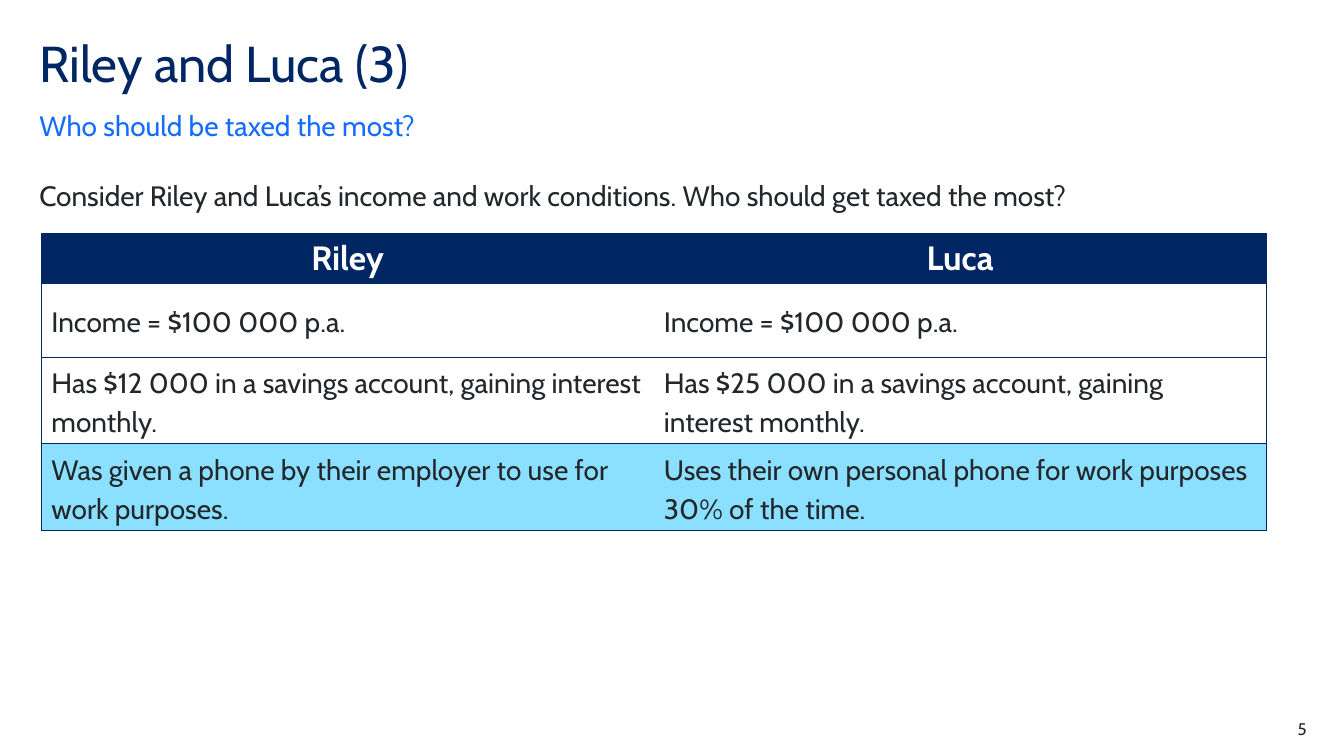
from dataclasses import dataclass

from lxml import etree
from pptx import Presentation
from pptx.dml.color import RGBColor
from pptx.enum.text import MSO_ANCHOR, PP_ALIGN
from pptx.oxml.ns import qn
from pptx.util import Inches, Pt

TOP, MIDDLE, BOTTOM = MSO_ANCHOR.TOP, MSO_ANCHOR.MIDDLE, MSO_ANCHOR.BOTTOM
LEFT, CENTER, RIGHT = PP_ALIGN.LEFT, PP_ALIGN.CENTER, PP_ALIGN.RIGHT

NAVY = RGBColor(0x00, 0x26, 0x64)
BLUE = RGBColor(0x14, 0x6C, 0xFD)
SKY = RGBColor(0x8C, 0xE0, 0xFF)
INK = RGBColor(0x22, 0x27, 0x2B)
WHITE = RGBColor(0xFF, 0xFF, 0xFF)

FONT = "Cabin"
WIDTH, HEIGHT = 13.33, 7.5
MARGIN = 0.39
BORDER = Pt(0.5)


@dataclass
class Label:
    text: str
    left: float
    top: float
    width: float
    height: float
    size: int
    color: RGBColor
    align: PP_ALIGN = LEFT
    anchor: MSO_ANCHOR = TOP
    spacing: float = 1.0


@dataclass
class Row:
    texts: tuple[str, str]
    fill: RGBColor
    height: float = 0.73
    size: int = 20
    color: RGBColor = INK
    bold: bool = False
    align: PP_ALIGN = LEFT
    anchor: MSO_ANCHOR = MIDDLE
    spacing: float = 1.14


LABELS = [
    Label("Riley and Luca (3)", MARGIN, 0.39, 11.02, 0.6, 36, NAVY, spacing=0.9),
    Label("Who should be taxed the most?", MARGIN, 1.07, 11.02, 0.34, 20, BLUE,
          anchor=BOTTOM),
    Label("Consider Riley and Luca’s income and work conditions. "
          "Who should get taxed the most?", MARGIN, 1.77, 12.56, 0.4, 20, INK),
    Label("5", 12.17, 7.13, 0.79, 0.2, 12, INK, align=RIGHT),
]

ROWS = [
    Row(("Riley", "Luca"), NAVY, 0.46, 24, WHITE, True, CENTER, TOP, 1.0),
    Row(("Income = $100 000 p.a.", "Income = $100 000 p.a."), WHITE),
    Row(("Has $12 000 in a savings account, gaining interest monthly.",
         "Has $25 000 in a savings account, gaining interest monthly."), WHITE),
    Row(("Was given a phone by their employer to use for work purposes.",
         "Uses their own personal phone for work purposes 30% of the time."), SKY),
]


def write(tf, item: Label | Row, text: str, bold: bool = False) -> None:
    p = tf.paragraphs[0]
    p.alignment = item.align
    p.line_spacing = item.spacing
    r = p.add_run()
    r.text = text
    r.font.name = FONT
    r.font.size = Pt(item.size)
    r.font.bold = bold
    r.font.color.rgb = item.color


def add_label(s, label: Label) -> None:
    sp = s.shapes.add_textbox(Inches(label.left), Inches(label.top),
                              Inches(label.width), Inches(label.height))
    tf = sp.text_frame
    tf.word_wrap = True
    tf.margin_left = tf.margin_top = tf.margin_right = tf.margin_bottom = 0
    tf.vertical_anchor = label.anchor
    write(tf, label, label.text)


def set_borders(cell, sides: str) -> None:
    tc_pr = cell._tc.get_or_add_tcPr()
    for side in "LRTB":
        ln = etree.SubElement(tc_pr, qn(f"a:ln{side}"), w=str(BORDER))
        if side in sides:
            fill = etree.SubElement(ln, qn("a:solidFill"))
            etree.SubElement(fill, qn("a:srgbClr"), val=str(NAVY))
        else:
            etree.SubElement(ln, qn("a:noFill"))


def add_comparison(s, rows: list[Row], left: float, top: float, width: float) -> None:
    height = sum(row.height for row in rows)
    table = s.shapes.add_table(len(rows), 2, Inches(left), Inches(top),
                               Inches(width), Inches(height)).table
    for i, row in enumerate(rows):
        table.rows[i].height = Inches(row.height)
        for j, text in enumerate(row.texts):
            cell = table.cell(i, j)
            set_borders(cell, "TB" + "LR"[j])
            cell.fill.solid()
            cell.fill.fore_color.rgb = row.fill
            cell.vertical_anchor = row.anchor
            write(cell.text_frame, row, text, row.bold)


def main() -> None:
    prs = Presentation()
    prs.slide_width, prs.slide_height = Inches(WIDTH), Inches(HEIGHT)
    s = prs.slides.add_slide(prs.slide_layouts[6])
    for label in LABELS:
        add_label(s, label)
    add_comparison(s, ROWS, 0.41, 2.31, 12.15)
    prs.save("out.pptx")


if __name__ == "__main__":
    main()
